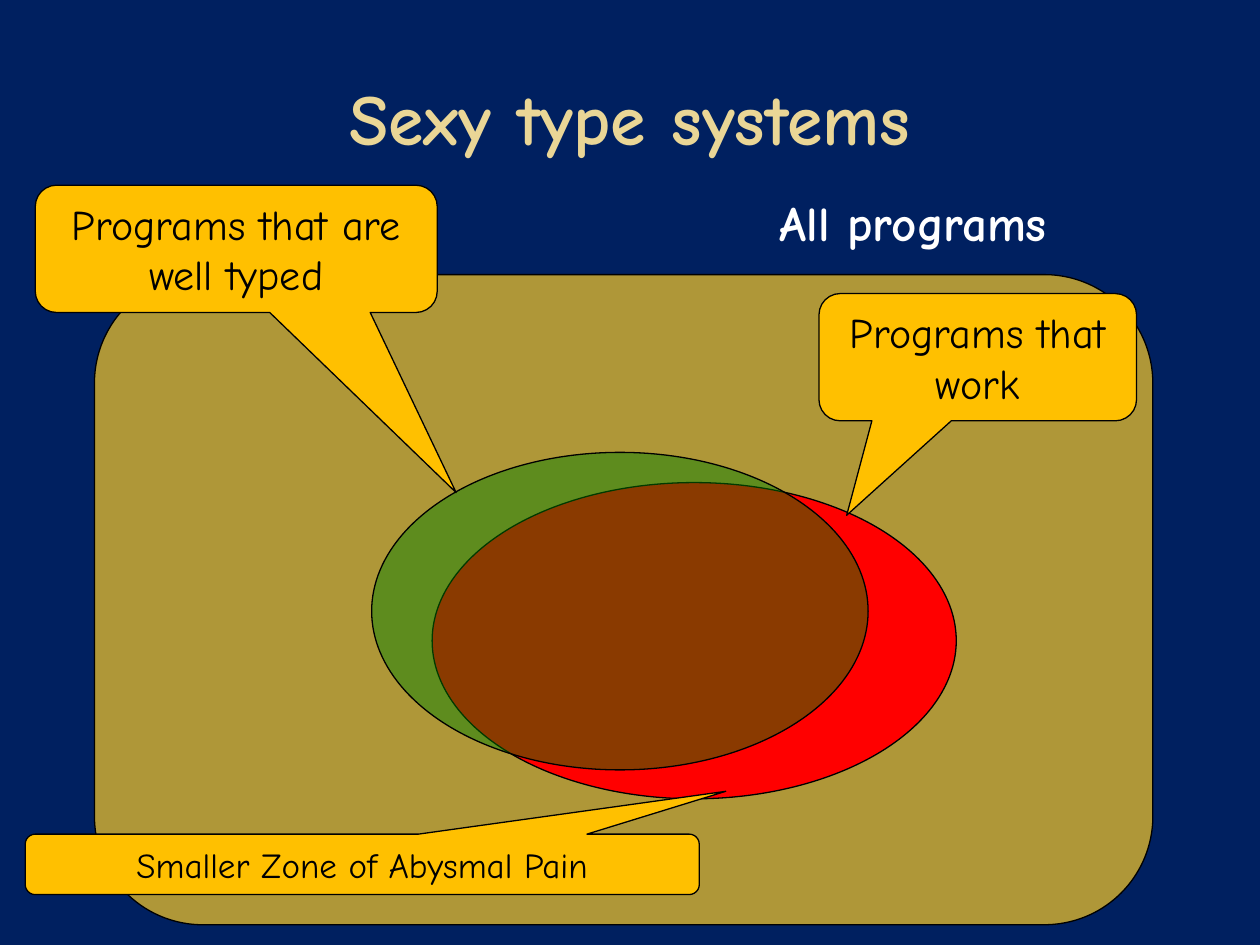
from lxml import etree
from pptx import Presentation
from pptx.dml.color import RGBColor
from pptx.enum import shapes, text
from pptx.oxml.ns import qn
from pptx.util import Inches, Pt

COLORS = {
    "background": "002060", "title": "EAD696", "universe": "AF9738",
    "working": "FF0000", "typed": "008000", "callout": "FFC000",
    "ink": "000000", "label": "FFFFFF",
}
KIND = shapes.MSO_SHAPE


class Diagram:
    font = "Comic Neue"

    def __init__(self, slide):
        self.slide = slide
        background = slide.background.fill
        background.solid()
        background.fore_color.rgb = self.rgb("background")

    def rgb(self, color):
        return RGBColor.from_string(COLORS[color])

    def set_text(self, frame, words, size, color, bold=False, align=text.PP_ALIGN.CENTER):
        frame.text = words
        paragraph = frame.paragraphs[0]
        paragraph.alignment = align
        font = paragraph.font
        font.name, font.size, font.bold = self.font, Pt(size), bold
        font.color.rgb = self.rgb(color)

    def title(self, words, box):
        heading = self.slide.shapes.title
        heading.left, heading.top, heading.width, heading.height = map(Inches, box)
        heading.text_frame.vertical_anchor = text.MSO_ANCHOR.MIDDLE
        self.set_text(heading.text_frame, words, 41, "title", bold=True)

    def label(self, words, box):
        caption = self.slide.shapes.add_textbox(*map(Inches, box)).text_frame
        caption.word_wrap = False
        self.set_text(caption, words, 28, "label", bold=True, align=text.PP_ALIGN.LEFT)

    def region(self, kind, box, color, opacity=100):
        area = self.slide.shapes.add_shape(kind, *map(Inches, box))
        area.shadow.inherit = False
        area.fill.solid()
        area.fill.fore_color.rgb = self.rgb(color)
        area.line.color.rgb = self.rgb("ink")
        area.line.width = Pt(0.75)
        if opacity < 100:
            tint = area.element.spPr.find(qn("a:solidFill"))[0]
            etree.SubElement(tint, qn("a:alpha"), val=str(opacity * 1000))
        return area

    def callout(self, words, box, tip, size=24):
        """Speech bubble whose pointer ends at the slide position tip."""
        bubble = self.region(KIND.ROUNDED_RECTANGULAR_CALLOUT, box, "callout")
        left, top, width, height = box
        bubble.adjustments[0] = (tip[0] - left) / width - 0.5
        bubble.adjustments[1] = (tip[1] - top) / height - 0.5
        bubble.text_frame.word_wrap = True
        bubble.text_frame.vertical_anchor = text.MSO_ANCHOR.MIDDLE
        self.set_text(bubble.text_frame, words, size, "ink")


def main():
    deck = Presentation()
    deck.slide_width, deck.slide_height = Inches(10), Inches(7.5)
    diagram = Diagram(deck.slides.add_slide(deck.slide_layouts[5]))

    # Title
    diagram.title("Sexy type systems", (0.5, 0.3, 9, 1.25))

    # Sets of programs
    diagram.region(KIND.ROUNDED_RECTANGLE, (0.75, 2.18, 8.4, 5.16), "universe")
    diagram.region(KIND.OVAL, (3.43, 3.83, 4.16, 2.51), "working")
    diagram.region(KIND.OVAL, (2.95, 3.59, 3.94, 2.52), "typed", opacity=46)

    # Names of the sets
    diagram.label("All programs", (6.09, 1.48, 2.57, 0.57))
    diagram.callout("Programs that work", (6.5, 2.33, 2.52, 1.01), (6.72, 4.09))
    diagram.callout("Programs that are well typed", (0.28, 1.47, 3.19, 1.01), (3.62, 3.91))
    diagram.callout("Smaller Zone of Abysmal Pain", (0.2, 6.62, 5.35, 0.48), (5.76, 6.28), size=20)

    deck.save("out.pptx")


if __name__ == "__main__":
    main()
